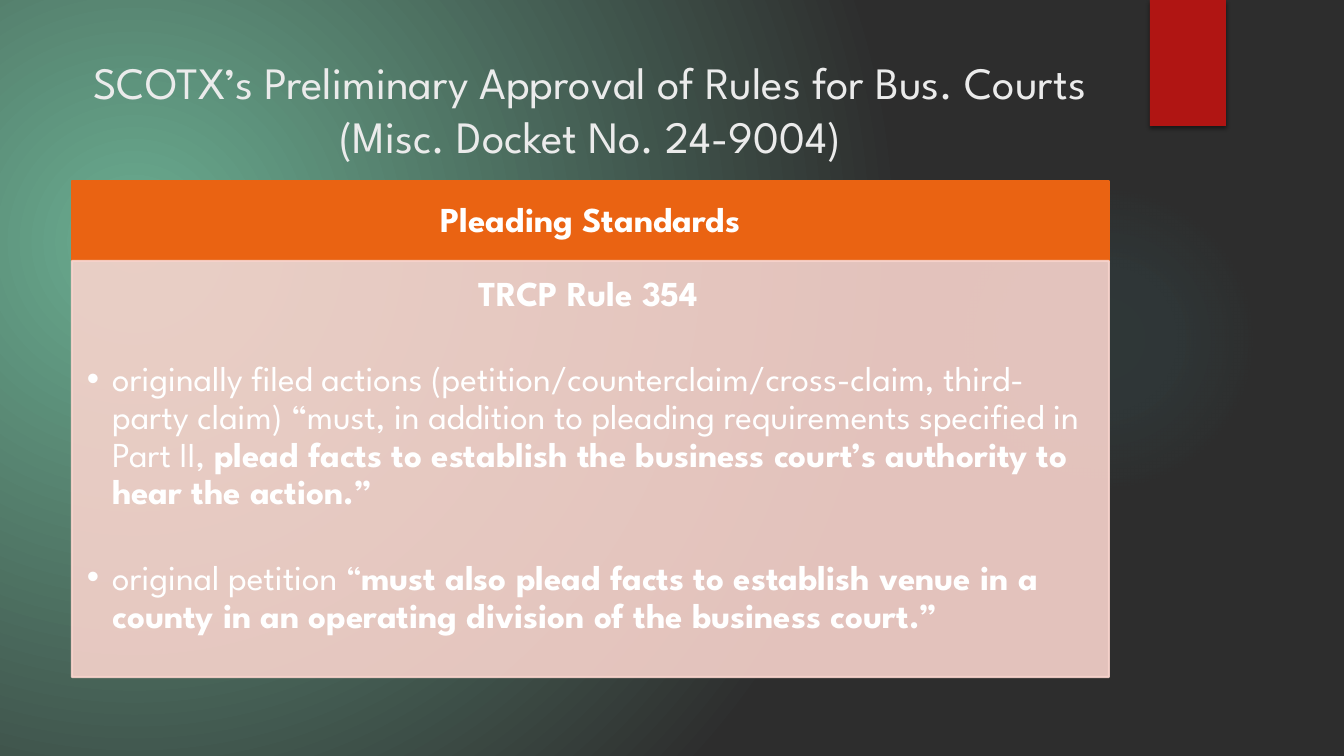
import pptx
import pptx.dml.color
import pptx.enum.shapes
import pptx.enum.text
import pptx.oxml
import pptx.oxml.ns
import pptx.util
from dataclasses import dataclass

PX = 914400 / 100.8
NS = pptx.oxml.ns.nsdecls("a")
SHAPE = pptx.enum.shapes.MSO_SHAPE
ALIGN = pptx.enum.text.PP_ALIGN
ANCHOR = pptx.enum.text.MSO_ANCHOR


@dataclass
class Theme:
    font: str = "League Spartan"
    title_size: int = 32
    text_size: int = 25
    title: str = "EBEBEB"
    text: str = "FFFFFF"
    glow: str = "50B9C1"
    ribbon: str = "B01513"
    header: str = "EA6312"
    panel: str = "F7D3CC"
    bg_inner: str = "6AAC90"
    bg_outer: str = "2D2D2D"


def px(n):
    return pptx.util.Emu(round(n * PX))


def rgb(value):
    return pptx.dml.color.RGBColor.from_string(value)


def radial(stops, l, t, r, b):
    """Circular gradient; stops are (position, colour, opacity) in percent."""
    gs = "".join(
        f'<a:gs pos="{pos * 1000}"><a:srgbClr val="{color}">'
        f'<a:alpha val="{alpha * 1000}"/></a:srgbClr></a:gs>'
        for pos, color, alpha in stops)
    return pptx.oxml.parse_xml(
        f'<a:gradFill {NS} rotWithShape="1"><a:gsLst>{gs}</a:gsLst>'
        f'<a:path path="circle"><a:fillToRect l="{l * 1000}" t="{t * 1000}" '
        f'r="{r * 1000}" b="{b * 1000}"/></a:path></a:gradFill>')


def swap_gradient(fill, parent, gradient):
    fill.gradient()
    old = parent.find(".//" + pptx.oxml.ns.qn("a:gradFill"))
    old.getparent().replace(old, gradient)


class Deck:
    def __init__(self, theme):
        self.theme = theme
        self.prs = pptx.Presentation()
        self.prs.slide_width, self.prs.slide_height = px(1344), px(756)
        self.slide = self.prs.slides.add_slide(self.prs.slide_layouts[1])

    def background(self, stops, focus):
        swap_gradient(self.slide.background.fill, self.slide.element,
                      radial(stops, *focus))

    def shape(self, kind, box, color=None):
        sp = self.slide.shapes.add_shape(kind, *map(px, box))
        sp.shadow.inherit = False
        if color:
            self.paint(sp, color)
        sp.line.fill.background()
        return sp

    def paint(self, sp, color, opacity=100, outline=False):
        fills = [sp.fill]
        if outline:
            sp.line.width = pptx.util.Pt(1.5)
            fills.append(sp.line.fill)
        for fill in fills:
            fill.solid()
            fill.fore_color.rgb = rgb(color)
        if opacity < 100:
            for clr in sp.element.spPr.iter(pptx.oxml.ns.qn("a:srgbClr")):
                clr.append(pptx.oxml.parse_xml(
                    f'<a:alpha {NS} val="{opacity * 1000}"/>'))

    def glow(self, box, stops):
        sp = self.shape(SHAPE.OVAL, box)
        swap_gradient(sp.fill, sp.element.spPr, radial(stops, 50, 50, 50, 50))

    def drop_shadow(self, sp):
        effects = sp.element.spPr.find(pptx.oxml.ns.qn("a:effectLst"))
        effects.append(pptx.oxml.parse_xml(
            f'<a:outerShdw {NS} blurRad="38100" dist="25400" dir="5400000" '
            'rotWithShape="0"><a:srgbClr val="000000"><a:alpha val="45000"/>'
            '</a:srgbClr></a:outerShdw>'))

    def placeholder(self, idx, box):
        """Move a placeholder into place, in front of what is drawn so far."""
        sp = self.slide.placeholders[idx]
        sp.left, sp.top, sp.width, sp.height = map(px, box)
        sp.element.getparent().append(sp.element)
        return sp

    def frame(self, sp, insets, anchor):
        tf = sp.text_frame
        tf.word_wrap = True
        tf.auto_size = pptx.enum.text.MSO_AUTO_SIZE.NONE
        tf.vertical_anchor = anchor
        (tf.margin_left, tf.margin_top,
         tf.margin_right, tf.margin_bottom) = map(px, insets)
        return tf

    def add_runs(self, p, runs, size, color, align, spacing=0.9, before=0):
        p.alignment, p.line_spacing = align, spacing
        p.space_before, p.space_after = pptx.util.Pt(before), pptx.util.Pt(0)
        for text, bold in runs:
            r = p.add_run()
            r.text = text
            r.font.name, r.font.size = self.theme.font, pptx.util.Pt(size)
            r.font.bold, r.font.color.rgb = bold, rgb(color)

    def title(self, box, text):
        tf = self.frame(self.placeholder(0, box), (10, 5, 10, 5), ANCHOR.TOP)
        self.add_runs(tf.paragraphs[0], [(text, False)], self.theme.title_size,
                      self.theme.title, ALIGN.CENTER, spacing=1.0)

    def header(self, box, text):
        sp = self.shape(SHAPE.RECTANGLE, box)
        self.paint(sp, self.theme.header, outline=True)
        tf = self.frame(sp, (19, 11, 19, 11), ANCHOR.MIDDLE)
        self.add_runs(tf.paragraphs[0], [(text, True)], self.theme.text_size,
                      self.theme.text, ALIGN.CENTER)

    def rule_panel(self, box, heading, items):
        sp = self.placeholder(1, box)
        self.paint(sp, self.theme.panel, opacity=90, outline=True)
        tf = self.frame(sp, (15, 15, 19, 22), ANCHOR.TOP)
        for i, runs in enumerate([[(heading, True)]] + items):
            p = tf.add_paragraph() if i else tf.paragraphs[0]
            p.level = 1
            pPr = p._p.get_or_add_pPr()
            pPr.set("marL", "228600")
            pPr.set("indent", "-228600")
            bullet = 'buChar {} char="•"' if i else "buNone {}"
            pPr.append(pptx.oxml.parse_xml(f"<a:{bullet.format(NS)}/>"))
            self.add_runs(p, runs, self.theme.text_size, self.theme.text,
                          ALIGN.LEFT if i else ALIGN.CENTER,
                          before=34 if i else 0)


def main():
    theme = Theme()
    deck = Deck(theme)

    # Backdrop
    deck.background([(1, theme.bg_inner, 100), (100, theme.bg_outer, 100)],
                    (45, 65, 125, 100))
    deck.glow((949, 184, 310, 310),
              [(0, theme.glow, 7), (36, theme.glow, 6), (69, theme.glow, 0)])
    ribbon = deck.shape(SHAPE.RECTANGLE, (1150, 0, 76, 126), theme.ribbon)
    deck.drop_shadow(ribbon)

    # Title
    left, width = 72, 1037
    deck.title((left, 50, width, 102),
               "SCOTX’s Preliminary Approval of Rules for Bus. Courts "
               "(Misc. Docket No. 24-9004)")

    # Pleading standards
    deck.header((left, 181, width, 80), "Pleading Standards")
    deck.rule_panel((left, 261, width, 416), "TRCP Rule 354", [
        [("originally filed actions (petition/counterclaim/cross-claim, "
          "third-party claim) “must, in addition to pleading requirements "
          "specified in Part II, ", False),
         ("plead facts to establish the business court’s authority to hear "
          "the action.”", True)],
        [("original petition “", False),
         ("must also plead facts to establish venue in a county in an "
          "operating division of the business court.”", True)],
    ])

    deck.prs.save("out.pptx")


if __name__ == "__main__":
    main()
